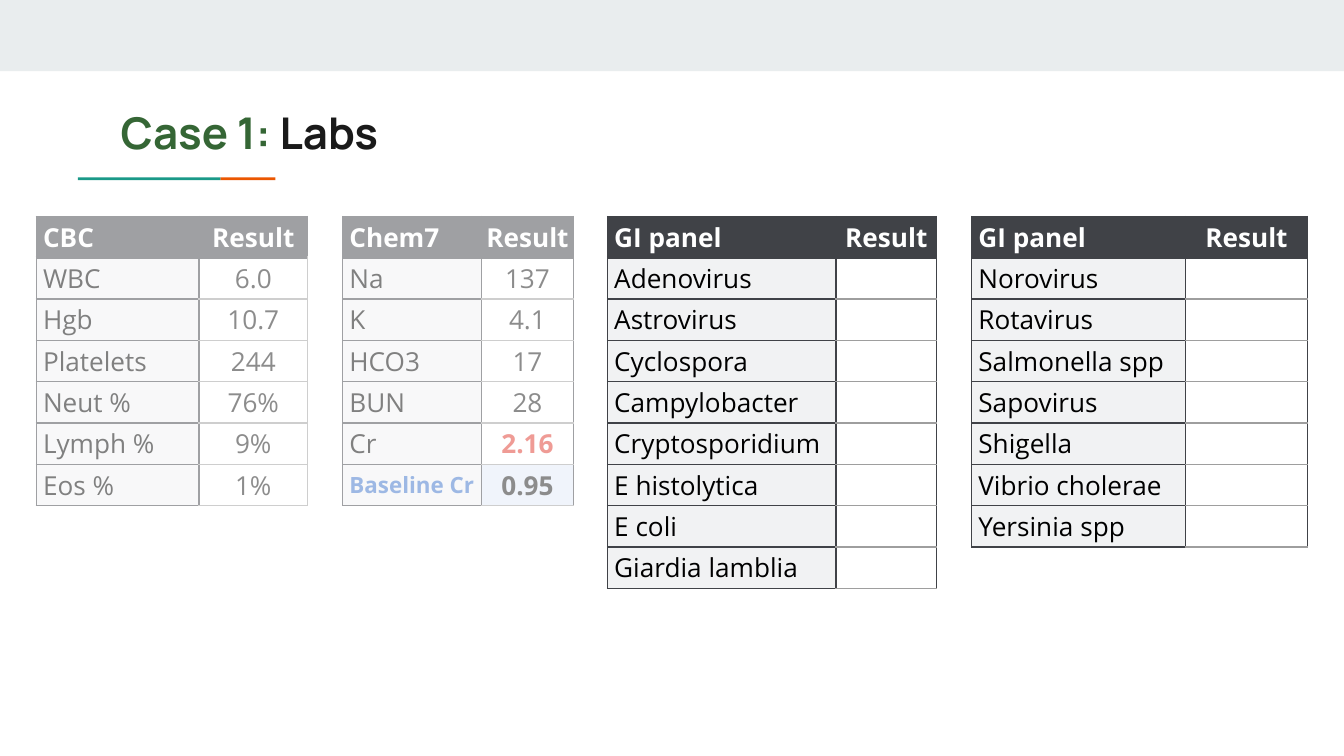
from lxml.etree import SubElement
from pptx import Presentation
from pptx.dml.color import RGBColor
from pptx.enum.shapes import MSO_SHAPE as Shape
from pptx.enum.text import MSO_ANCHOR as Anchor, PP_ALIGN as Align
from pptx.oxml.ns import qn
from pptx.util import Inches, Pt

DARK, GREY, PALE, WHITE, INK = "404247", "9E9E9E", "F1F2F3", "FFFFFF", "1A1A1A"
TABLE_TOP = 1.61
ROW_HEIGHT = Inches(2.77 / 9)

# left, column widths, right border colour, rows
LAB_TABLES = [
    (0.27, (1.21, 0.81), GREY, [
        ("CBC", "Result"), ("WBC", "6.0"), ("Hgb", "10.7"), ("Platelets", "244"),
        ("Neut %", "76%"), ("Lymph %", "9%"), ("Eos %", "1%")]),
    (2.55, (1.03, 0.69), DARK, [
        ("Chem7", "Result"), ("Na", "137"), ("K", "4.1"), ("HCO3", "17"),
        ("BUN", "28"), ("Cr", "2.16"), ("Baseline Cr", "0.95")]),
    (4.52, (1.7, 0.75), DARK, [
        ("GI panel", "Result"), ("Adenovirus", ""), ("Astrovirus", ""),
        ("Cyclospora", ""), ("Campylobacter", ""), ("Cryptosporidium", ""),
        ("E histolytica", ""), ("E coli", ""), ("Giardia lamblia", "")]),
    (7.23, (1.59, 0.91), DARK, [
        ("GI panel", "Result"), ("Norovirus", ""), ("Rotavirus", ""),
        ("Salmonella spp", ""), ("Sapovirus", ""), ("Shigella", ""),
        ("Vibrio cholerae", ""), ("Yersinia spp", "")]),
]
HIGHLIGHTS = {
    "2.16": {"color": "DF382C", "bold": True},
    "Baseline Cr": {"color": "3B71CA", "bold": True, "size": 12},
    "0.95": {"bold": True, "fill": "E2EAF7"},
}


def rgb(color):
    return RGBColor.from_string(color)


def add_run(paragraph, text, color, size, name, bold):
    run = paragraph.add_run()
    run.text = text
    for attribute, value in {"size": Pt(size), "name": name, "bold": bold}.items():
        setattr(run.font, attribute, value)
    run.font.color.rgb = rgb(color)


def add_block(slide, left, top, width, height, color, opacity=None):
    block = slide.shapes.add_shape(
        Shape.RECTANGLE, Inches(left), Inches(top), Inches(width), Inches(height))
    block.shadow.inherit = False
    block.line.fill.background()
    block.fill.solid()
    block.fill.fore_color.rgb = rgb(color)
    if opacity is not None:
        fill_color = block.fill._xPr.find(qn("a:solidFill"))[0]
        SubElement(fill_color, qn("a:alpha"), val=str(opacity * 1000))


def add_title(slide):
    title = slide.shapes.add_textbox(
        Inches(0.8), Inches(0.69), Inches(8.41), Inches(0.59))
    frame = title.text_frame
    frame.word_wrap = True
    for side in ("left", "top", "right", "bottom"):
        setattr(frame, f"margin_{side}", Inches(0.1))
    for text, color in (("Case 1:", "356635"), (" Labs", INK)):
        add_run(frame.paragraphs[0], text, color, 23.4, "Manrope", True)


def set_borders(cell, borders):
    """Draw cell borders; borders maps L, R, T and B, in that order, to (colour, points)."""
    properties = cell._tc.get_or_add_tcPr()
    for side, (color, width) in borders.items():
        line = SubElement(properties, qn(f"a:ln{side}"), w=str(Pt(width)))
        fill = SubElement(line, qn("a:solidFill"))
        SubElement(fill, qn("a:srgbClr"), val=color)


def format_cell(cell, text, row, is_label, edge):
    header = row == 0
    if header:
        style = {"color": WHITE, "bold": True, "fill": DARK}
    elif is_label:
        style = {"color": "000000", "bold": False, "fill": PALE}
    else:
        style = {"color": INK, "bold": False, "fill": None}
    style = {"size": 14, **style, **HIGHLIGHTS.get(text, {})}

    plain = DARK if header or is_label else GREY
    set_borders(cell, {
        "L": (DARK, 0.75),
        "R": (DARK if header or is_label else edge, 0.75),
        "T": (DARK, 1.5) if row == 1 else (plain, 0.75),
        "B": (plain, 1.5 if header else 0.75),
    })
    layout = {"margin_left": Inches(0.05 if is_label else 0), "margin_right": 0,
              "margin_top": 0, "margin_bottom": 0, "vertical_anchor": Anchor.MIDDLE}
    for attribute, value in layout.items():
        setattr(cell, attribute, value)
    if style["fill"]:
        cell.fill.solid()
        cell.fill.fore_color.rgb = rgb(style["fill"])
    else:
        cell.fill.background()

    paragraph = cell.text_frame.paragraphs[0]
    paragraph.alignment = Align.LEFT if is_label else Align.CENTER
    if text:
        add_run(paragraph, text, style["color"], style["size"], "Open Sans", style["bold"])
    else:  # keeps an empty cell from growing its row
        SubElement(paragraph._p, qn("a:endParaRPr"), sz="1400")


def add_lab_table(slide, left, widths, edge, rows):
    table = slide.shapes.add_table(
        len(rows), len(widths), Inches(left), Inches(TABLE_TOP),
        Inches(sum(widths)), ROW_HEIGHT * len(rows)).table
    table.first_row = table.horz_banding = False
    for column, width in zip(table.columns, widths):
        column.width = Inches(width)
    for r, texts in enumerate(rows):
        table.rows[r].height = ROW_HEIGHT
        for c, text in enumerate(texts):
            format_cell(table.cell(r, c), text, r, c == 0, edge)


def main():
    deck = Presentation()
    deck.slide_width = Inches(10)
    deck.slide_height = deck.slide_width * 9 // 16
    slide = deck.slides.add_slide(deck.slide_layouts[6])
    add_block(slide, 0, 0, 10, 0.53, "E9EDEE")
    add_block(slide, 1.64, 1.32, 0.41, 0.02, "EB5600")
    add_block(slide, 0.58, 1.32, 1.06, 0.02, "1A9988")
    add_title(slide)
    for lab_table in LAB_TABLES:
        add_lab_table(slide, *lab_table)
    add_block(slide, 0.16, 1.53, 4.2, 2.32, WHITE, opacity=50)
    deck.save("out.pptx")


if __name__ == "__main__":
    main()
